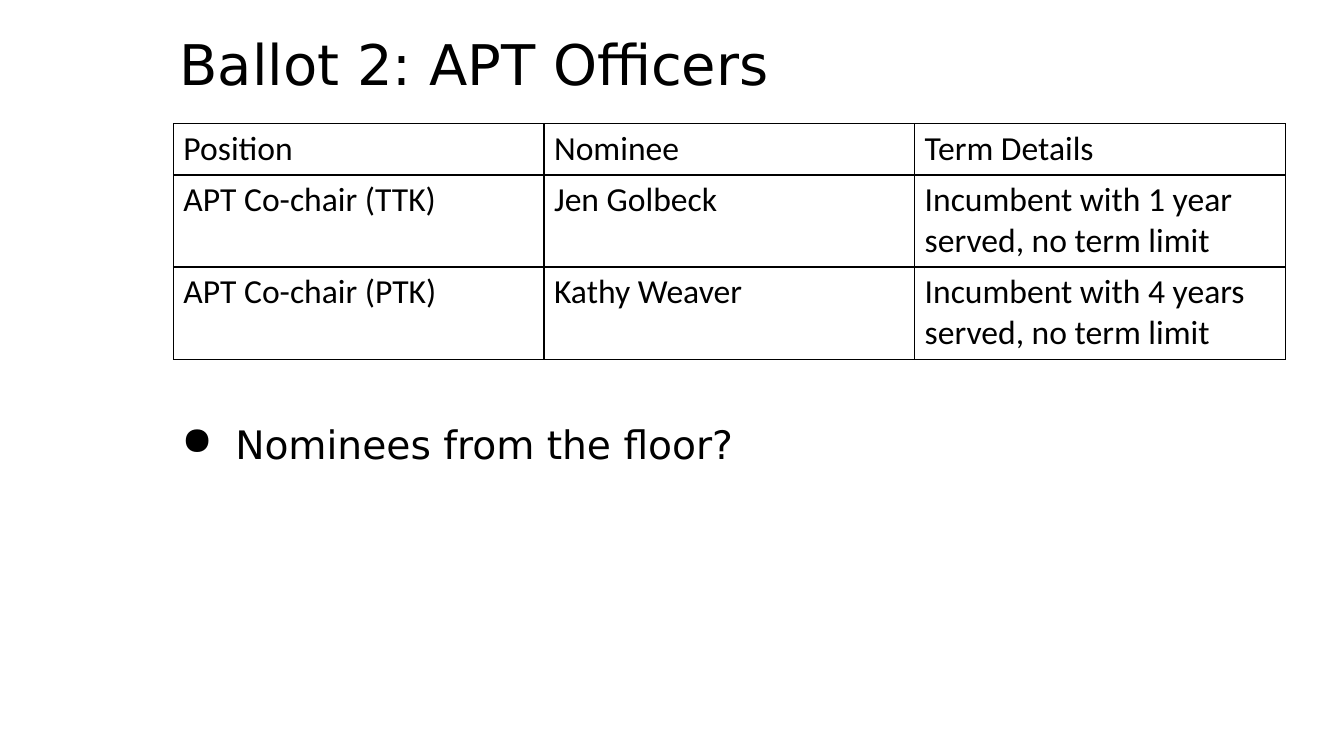
from dataclasses import dataclass

from lxml.etree import SubElement
from pptx import Presentation
from pptx.dml.color import RGBColor
from pptx.enum.text import MSO_ANCHOR, MSO_AUTO_SIZE, PP_ALIGN
from pptx.oxml.ns import qn
from pptx.util import Cm, Pt


@dataclass(frozen=True)
class Theme:
    """Colours, fonts and type sizes of the slide."""

    ink: str = "000000"
    paper: str = "FFFFFF"
    heading_font: str = "DejaVu Sans"
    table_font: str = "Calibri"
    title_size: int = 40
    bullet_size: int = 28
    table_size: int = 24
    border_width: int = 1


class SlideBuilder:
    """Adds styled elements to the current slide."""

    def __init__(self, slide, theme):
        """Keep the slide and its theme."""
        self.slide = slide
        self.theme = theme
        fill = slide.background.fill
        fill.solid()
        fill.fore_color.rgb = RGBColor.from_string(theme.paper)

    def format_runs(self, paragraph, font_name, size):
        """Set the font, size and colour of every run."""
        for run in paragraph.runs:
            run.font.name = font_name
            run.font.size = Pt(size)
            run.font.color.rgb = RGBColor.from_string(self.theme.ink)

    def title(self, text, left, top, width, height):
        """Place and format the title placeholder."""
        shape = self.slide.shapes.title
        shape.left, shape.top = Cm(left), Cm(top)
        shape.width, shape.height = Cm(width), Cm(height)
        text_frame = shape.text_frame
        text_frame.text = text
        text_frame.word_wrap = True
        text_frame.auto_size = MSO_AUTO_SIZE.NONE
        text_frame.vertical_anchor = MSO_ANCHOR.MIDDLE
        paragraph = text_frame.paragraphs[0]
        paragraph.alignment = PP_ALIGN.LEFT
        paragraph.line_spacing = 0.9
        self.format_runs(paragraph, self.theme.heading_font, self.theme.title_size)

    def cell_borders(self, cell):
        """Draw a thin line on all four sides of a cell."""
        properties = cell._tc.get_or_add_tcPr()
        for position, side in enumerate(("lnL", "lnR", "lnT", "lnB")):
            line = SubElement(properties, qn(f"a:{side}"), w=str(Pt(self.theme.border_width)))
            fill = SubElement(line, qn("a:solidFill"))
            SubElement(fill, qn("a:srgbClr"), val=self.theme.ink)
            properties.insert(position, line)

    def table(self, rows, left, top, width, row_heights):
        """Add a ruled table with equal columns."""
        column_count = len(rows[0])
        shape = self.slide.shapes.add_table(
            len(rows), column_count, Cm(left), Cm(top), Cm(width), Cm(sum(row_heights))
        )
        table = shape.table
        table.first_row = False
        table.horz_banding = False
        for column in table.columns:
            column.width = Cm(width / column_count)
        for row, height, texts in zip(table.rows, row_heights, rows):
            row.height = Cm(height)
            for cell, text in zip(row.cells, texts):
                cell.text_frame.text = text
                cell.fill.background()
                self.cell_borders(cell)
                self.format_runs(
                    cell.text_frame.paragraphs[0], self.theme.table_font, self.theme.table_size
                )

    def bullet(self, text, left, top, width, height):
        """Add a text box with one bulleted line."""
        shape = self.slide.shapes.add_textbox(Cm(left), Cm(top), Cm(width), Cm(height))
        text_frame = shape.text_frame
        text_frame.word_wrap = True
        text_frame.auto_size = MSO_AUTO_SIZE.SHAPE_TO_FIT_TEXT
        text_frame.margin_left = text_frame.margin_right = Cm(0.34)
        text_frame.margin_top = text_frame.margin_bottom = Cm(0.34)
        text_frame.text = text
        paragraph = text_frame.paragraphs[0]
        properties = paragraph._p.get_or_add_pPr()
        properties.set("marL", str(Cm(1.7)))
        properties.set("indent", str(Cm(-1.35)))
        SubElement(properties, qn("a:buChar"), char="●")
        self.format_runs(paragraph, self.theme.heading_font, self.theme.bullet_size)


def main():
    """Build and save the ballot slide."""
    presentation = Presentation()
    presentation.slide_width, presentation.slide_height = Cm(33.87), Cm(19.05)
    slide = presentation.slides.add_slide(presentation.slide_layouts.get_by_name("Title Only"))
    builder = SlideBuilder(slide, Theme())
    builder.title("Ballot 2: APT Officers", 4.27, -0.13, 28.02, 3.68)
    ballot = [
        ("Position", "Nominee", "Term Details"),
        ("APT Co-chair (TTK)", "Jen Golbeck", "Incumbent with 1 year served, no term limit"),
        ("APT Co-chair (PTK)", "Kathy Weaver", "Incumbent with 4 years served, no term limit"),
    ]
    builder.table(ballot, 4.37, 3.12, 28.02, (1.28, 2.3, 2.3))
    builder.bullet("Nominees from the floor?", 3.89, 10.24, 27.2, 1.88)
    presentation.save("out.pptx")


if __name__ == "__main__":
    main()
